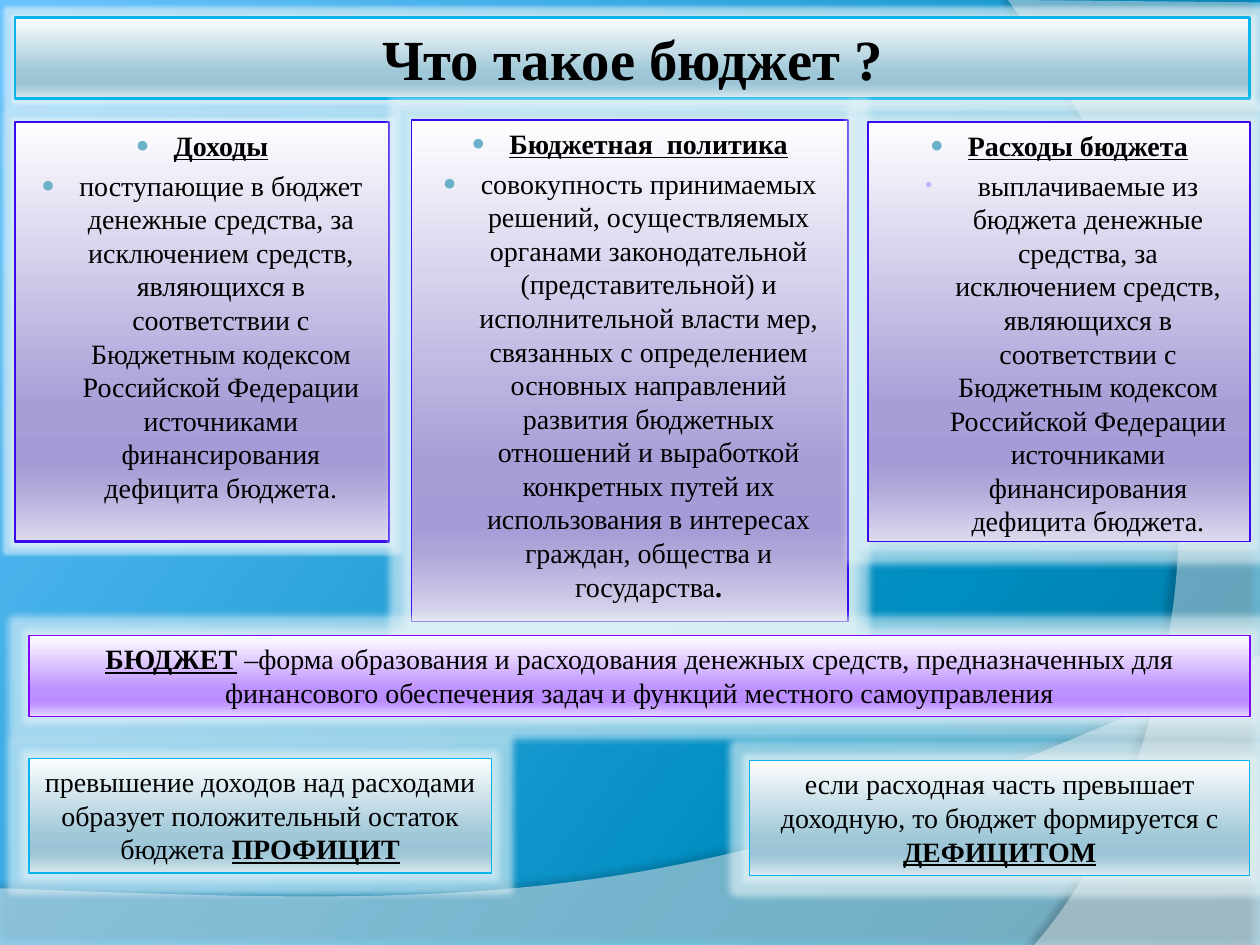
from lxml.etree import SubElement
from pptx import Presentation
from pptx.dml.color import RGBColor
from pptx.enum.shapes import MSO_SHAPE as Shape
from pptx.enum.text import MSO_ANCHOR as Anchor, PP_ALIGN as Align
from pptx.oxml.ns import qn
from pptx.util import Pt

WIDTH, HEIGHT = 720, 540
TEAL = [(0, "FEFEFF"), (68, "9EC7D7"), (81, "9BC5D6"), (86, "A5CAD9"), (100, "DAE8EE")]
LILAC = [(0, "FEFEFF"), (68, "A89ED7"), (81, "A59BD6"), (86, "AEA5D9"), (100, "DDDAEE")]
VIOLET = [(0, "FEFEFF"), (68, "BD90FF"), (81, "BB8CFF"), (86, "C199FF"), (100, "E4D6FF")]
SKY = [(0, "0076A1"), (30, "008DC0"), (100, "6AC3FF")]
DOT = ("●", "6BB1C9", 21.6, -21.6)
SMALL_DOT = ("•", "BBB4FB", 33.1, -30.2)
MEANS = (
    "денежные средства, за исключением средств, являющихся в соответствии с "
    "Бюджетным кодексом Российской Федерации источниками финансирования "
    "дефицита бюджета."
)


def color(value):
    return RGBColor.from_string(value)


def add_xml(parent, tag, **attributes):
    return SubElement(parent, qn(tag), {key: str(value) for key, value in attributes.items()})


def add_rgb(parent, value, opacity=100):
    node = add_xml(parent, "a:srgbClr", val=value)
    if opacity < 100:
        add_xml(node, "a:alpha", val=opacity * 1000)


def curve(start, control1, control2, end, steps=60):
    """Return points along a cubic Bezier curve."""
    knots = (start, control1, control2, end)
    points = []
    for step in range(steps + 1):
        t = step / steps
        weights = ((1 - t) ** 3, 3 * t * (1 - t) ** 2, 3 * t * t * (1 - t), t ** 3)
        points.append(tuple(sum(w * knot[axis] for w, knot in zip(weights, knots))
                            for axis in (0, 1)))
    return points


class BudgetSlide:
    font = "Times New Roman"
    text_size = 16
    line_height = 19.2
    paragraph_gap = 3.6
    glow_color = "E6F4F8"

    def __init__(self, deck):
        self.page = deck.slides.add_slide(deck.slide_layouts[6])

    def gradient(self, fill, element, stops, angle):
        """Fill with any number of stops; the angle runs clockwise."""
        fill.gradient()
        fill.gradient_angle = 360 - angle
        stop_list = next(element.iter(qn("a:gsLst")))
        for stop in list(stop_list):
            stop_list.remove(stop)
        for position, value in stops:
            add_rgb(add_xml(stop_list, "a:gs", pos=position * 1000), value)

    def background(self, stops, angle):
        self.gradient(self.page.background.fill, self.page.element, stops, angle)

    def wave(self, points, opacity, shadow_opacity, distance, direction):
        """Draw a translucent white outline with a soft shadow."""
        corners = [(Pt(x), Pt(y)) for x, y in points]
        builder = self.page.shapes.build_freeform(*corners[0])
        builder.add_line_segments(corners[1:], close=True)
        shape = builder.convert_to_shape()
        shape.fill.solid()
        shape.fill.fore_color.rgb = color("FFFFFF")
        white = next(shape.element.spPr.iter(qn("a:srgbClr")))
        add_xml(white, "a:alpha", val=opacity * 1000)
        shape.line.fill.background()
        shape.shadow.inherit = False
        effects = shape.element.spPr.find(qn("a:effectLst"))
        shadow = add_xml(effects, "a:outerShdw", blurRad=Pt(4), dist=Pt(distance),
                         dir=direction * 60000, algn="ctr", rotWithShape=0)
        add_rgb(shadow, "000000", shadow_opacity)

    def panel(self, left, top, width, height, stops, line, paragraphs,
              line_width=0.75, glow=8, size=text_size, inset=7.2, anchor=Anchor.TOP):
        """Draw a glowing box; each paragraph is (bullet, [(text, style), ...])."""
        box = self.page.shapes.add_shape(
            Shape.RECTANGLE, Pt(left), Pt(top), Pt(width), Pt(height))
        self.gradient(box.fill, box.element.spPr, stops, 90)
        box.line.color.rgb = color(line)
        box.line.width = Pt(line_width)
        box.shadow.inherit = False
        effects = box.element.spPr.find(qn("a:effectLst"))
        add_rgb(add_xml(effects, "a:glow", rad=Pt(glow)), self.glow_color, 60)

        frame = box.text_frame
        frame.word_wrap = True
        frame.vertical_anchor = anchor
        frame.margin_left = frame.margin_right = Pt(inset)
        frame.margin_top = frame.margin_bottom = Pt(3.6)
        for index, (bullet, spans) in enumerate(paragraphs):
            para = frame.add_paragraph() if index else frame.paragraphs[0]
            self.set_spans(para, spans, size)
            if bullet:
                self.bullet(para, *bullet)

    def set_spans(self, para, spans, size):
        """Fill a paragraph; style holds b for bold and u for underline."""
        para.alignment = Align.CENTER
        para.line_spacing = Pt(self.line_height * size / self.text_size)
        for text, style in spans:
            span = para.add_run()
            span.text = text
            span.font.name = self.font
            span.font.size = Pt(size)
            span.font.bold = "b" in style
            span.font.underline = "u" in style
            span.font.color.rgb = color("000000")

    def bullet(self, para, symbol, value, margin, indent):
        para.space_before = Pt(self.paragraph_gap)
        properties = para._p.get_or_add_pPr()
        properties.set("marL", str(Pt(margin)))
        properties.set("indent", str(Pt(indent)))
        add_rgb(add_xml(properties, "a:buClr"), value)
        add_xml(properties, "a:buSzPct", val=80000)
        add_xml(properties, "a:buFont", typeface=self.font)
        add_xml(properties, "a:buChar", char=symbol)


def main():
    deck = Presentation()
    deck.slide_width, deck.slide_height = Pt(WIDTH), Pt(HEIGHT)
    slide = BudgetSlide(deck)

    slide.background(SKY, 217)
    bottom_edge = curve((720, 374.4), (402.5, 524.9), (281.5, 517.7), (0, 507.6))
    slide.wave([(0, 540.7), (720, 540.7)] + bottom_edge, 45, 35, 3.5, 270)
    right_edge = curve((591.1, 540), (673.2, 445.7), (733, 216), (576, 0))
    slide.wave([(720, 1.4), (720, 540)] + right_edge, 40, 45, 4, 180)

    slide.panel(8.6, 10.1, 705.6, 46.1, TEAL, "0AB3EC",
                [(None, [("Что такое бюджет ?", "b")])],
                line_width=1.5, glow=4, size=32.4, inset=3.6, anchor=Anchor.MIDDLE)

    slide.panel(8.6, 69.8, 213.8, 239.8, LILAC, "380AEC",
                [(DOT, [("Доходы", "bu")]),
                 (DOT, [("поступающие в бюджет " + MEANS, "")])],
                line_width=1.5, glow=4)
    policy = (
        "совокупность принимаемых решений, осуществляемых органами "
        "законодательной (представительной) и исполнительной власти мер, "
        "связанных с определением основных направлений развития бюджетных "
        "отношений и выработкой конкретных путей их использования в интересах "
        "граждан, общества и государства"
    )
    slide.panel(235.2, 68.6, 249.4, 286.6, LILAC, "380AEC",
                [(DOT, [("Бюджетная  политика", "bu")]),
                 (DOT, [(policy, ""), (".", "b")])])
    slide.panel(496.1, 69.8, 218.2, 239.8, LILAC, "380AEC",
                [(DOT, [("Расходы бюджета", "bu")]),
                 (SMALL_DOT, [("выплачиваемые из бюджета " + MEANS, "")])])

    slide.panel(16.6, 363.2, 697.7, 46.1, VIOLET, "8105FF",
                [(None, [("БЮДЖЕТ", "bu"),
                         (" –форма образования и расходования денежных средств, "
                          "предназначенных для финансового обеспечения задач и "
                          "функций местного самоуправления", "")])])
    slide.panel(16.6, 433.4, 264.2, 65.5, TEAL, "0AB3EC",
                [(None, [("превышение доходов над расходами образует "
                          "положительный остаток бюджета ", ""),
                         ("ПРОФИЦИТ", "bu")])])
    slide.panel(428.4, 434.7, 285.8, 65.5, TEAL, "0AB3EC",
                [(None, [("если расходная часть превышает доходную, то бюджет "
                          "формируется с ", ""),
                         ("ДЕФИЦИТОМ", "bu")])])

    deck.save("out.pptx")


if __name__ == "__main__":
    main()
